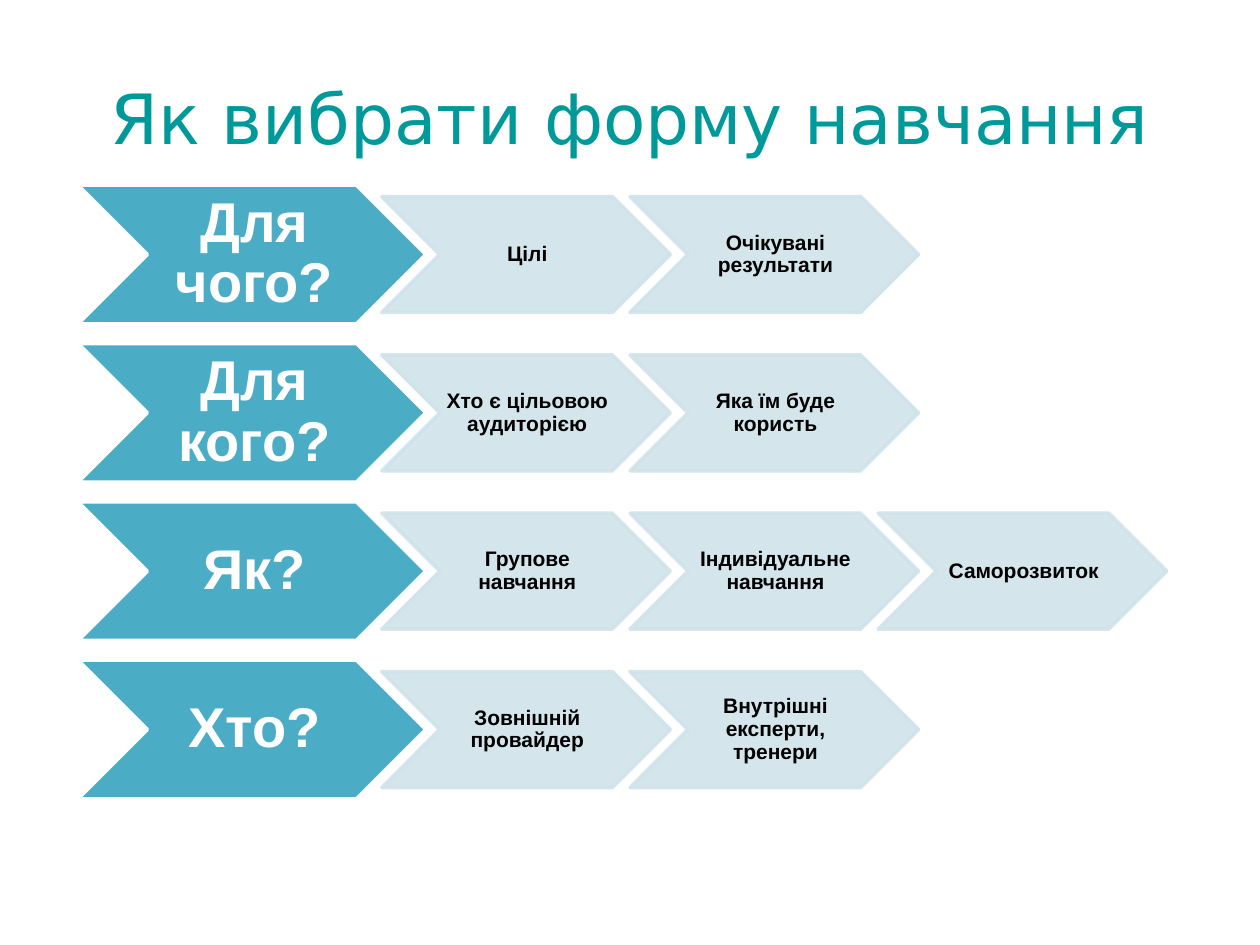
from dataclasses import dataclass

from lxml.etree import SubElement
from pptx import Presentation
from pptx.dml.color import RGBColor
from pptx.enum.shapes import MSO_SHAPE
from pptx.enum.text import MSO_ANCHOR, PP_ALIGN
from pptx.oxml.ns import qn
from pptx.shapes.autoshape import Shape
from pptx.slide import Slide
from pptx.util import Inches, Pt

TEAL = RGBColor(0x00, 0x99, 0x99)
BLUE = RGBColor(0x4B, 0xAC, 0xC6)
PALE_BLUE = RGBColor(0xD0, 0xE3, 0xEA)
WHITE = RGBColor(0xFF, 0xFF, 0xFF)
BLACK = RGBColor(0x00, 0x00, 0x00)


@dataclass(frozen=True)
class ChevronStyle:
    width: float
    height: float
    fill: RGBColor
    line: RGBColor
    opacity: int
    font_size: float
    font_color: RGBColor
    margin: float


@dataclass(frozen=True)
class Row:
    question: str
    answers: tuple[str, ...]


QUESTION = ChevronStyle(2.76, 1.1, BLUE, WHITE, 100, 32, WHITE, 0.04)
ANSWER = ChevronStyle(2.29, 0.92, PALE_BLUE, PALE_BLUE, 90, 12, BLACK, 0.02)

ROWS = (
    Row("Для чого?", ("Цілі", "Очікувані результати")),
    Row("Для кого?", ("Хто є цільовою аудиторією", "Яка їм буде користь")),
    Row("Як?", ("Групове навчання", "Індивідуальне навчання", "Саморозвиток")),
    Row("Хто?", ("Зовнішній провайдер", "Внутрішні експерти, тренери")),
)
QUESTION_LEFT = 0.62
ANSWER_LEFT = 3.03
ANSWER_STEP = 1.97
FIRST_CENTER = 2.02
ROW_STEP = (5.24 - 1.47) / 3


def write_text(shape: Shape, text: str, *, font: str, size: float, color: RGBColor,
               bold: bool = False, line_spacing: float = 1.0) -> None:
    frame = shape.text_frame
    frame.word_wrap = True
    frame.vertical_anchor = MSO_ANCHOR.MIDDLE
    paragraph = frame.paragraphs[0]
    paragraph.alignment = PP_ALIGN.CENTER
    paragraph.line_spacing = line_spacing
    run = paragraph.add_run()
    run.text = text
    run.font.name = font
    run.font.size = Pt(size)
    run.font.bold = bold
    run.font.color.rgb = color


def add_chevron(slide: Slide, text: str, left: float, center: float,
                style: ChevronStyle) -> None:
    shape = slide.shapes.add_shape(
        MSO_SHAPE.CHEVRON, Inches(left), Inches(center - style.height / 2),
        Inches(style.width), Inches(style.height))
    shape.shadow.inherit = False
    shape.fill.solid()
    shape.fill.fore_color.rgb = style.fill
    shape.line.color.rgb = style.line
    shape.line.width = Pt(2)
    if style.opacity < 100:
        properties = shape.element.spPr
        for solid_fill in properties.iter(qn("a:solidFill")):
            SubElement(solid_fill[0], qn("a:alpha"), val=str(style.opacity * 1000))
    frame = shape.text_frame
    frame.margin_left = Inches(style.margin)
    frame.margin_right = 0
    frame.margin_top = frame.margin_bottom = Inches(style.margin / 2)
    write_text(shape, text, font="Arial", size=style.font_size,
               color=style.font_color, bold=True, line_spacing=0.9)


def add_row(slide: Slide, row: Row, center: float) -> None:
    add_chevron(slide, row.question, QUESTION_LEFT, center, QUESTION)
    for column, answer in enumerate(row.answers):
        add_chevron(slide, answer, ANSWER_LEFT + column * ANSWER_STEP, center, ANSWER)


def main() -> None:
    presentation = Presentation()
    presentation.slide_width = Inches(10)
    presentation.slide_height = Inches(7.5)
    slide = presentation.slides.add_slide(presentation.slide_layouts[6])
    title = slide.shapes.add_textbox(Inches(0.5), Inches(0.3), Inches(9), Inches(1.25))
    write_text(title, "Як вибрати форму навчання", font="DejaVu Sans", size=39.6, color=TEAL)
    for index, row in enumerate(ROWS):
        add_row(slide, row, FIRST_CENTER + index * ROW_STEP)
    presentation.save("out.pptx")


if __name__ == "__main__":
    main()
